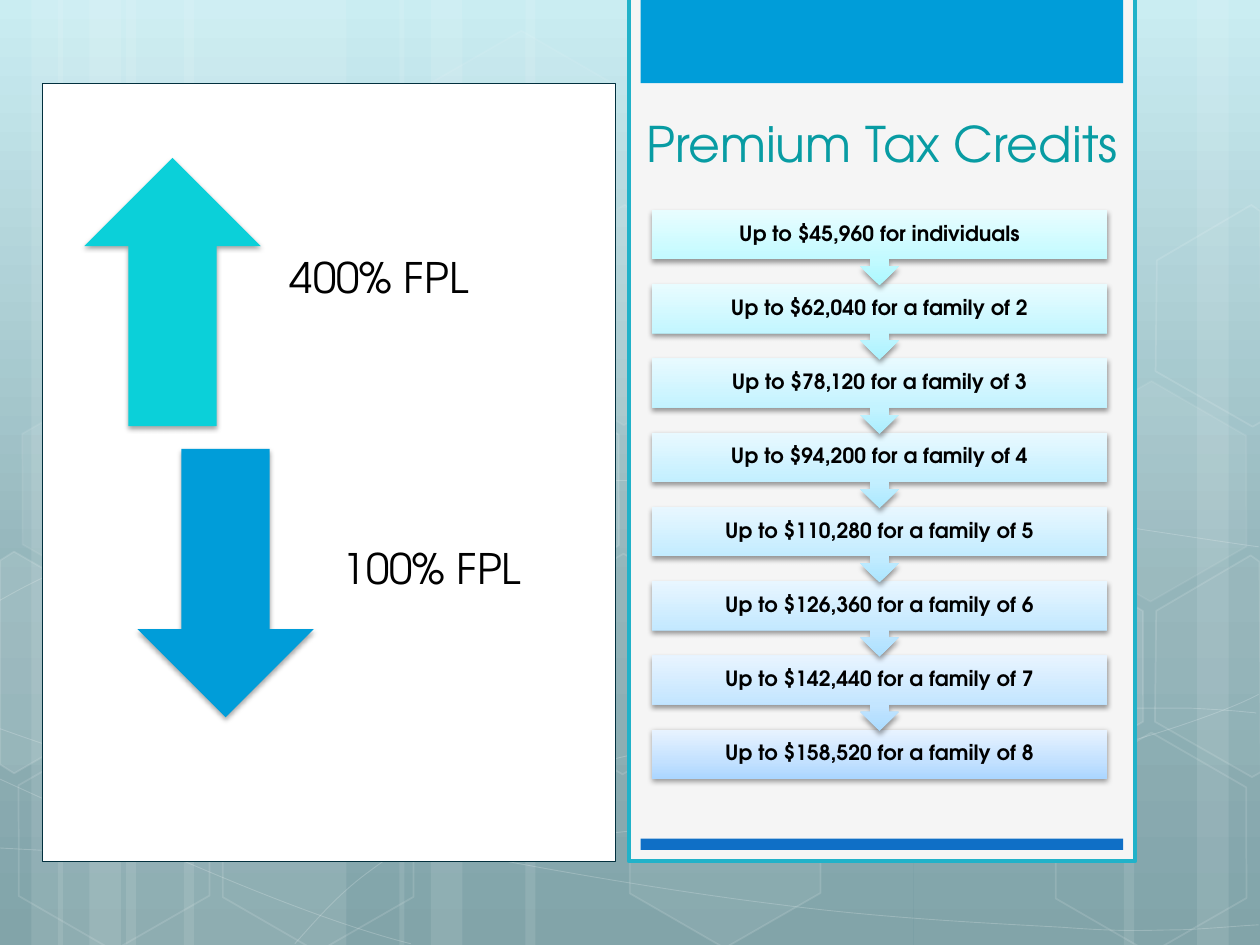
import math
from lxml import etree
from pptx import Presentation
from pptx import util as u
from pptx.dml.color import RGBColor
from pptx.enum import shapes, text
from pptx.oxml import ns

COLS, ROWS = 100, 75
FONT = "TeX Gyre Adventor"
WHITE = "FFFFFF"
KIND = shapes.MSO_SHAPE

prs = Presentation()
prs.slide_width, prs.slide_height = u.Inches(10), u.Inches(7.5)
COL, ROW = prs.slide_width / COLS, prs.slide_height / ROWS


def rgb(value):
    return RGBColor.from_string(value)


def node(parent, tag, **attrs):
    child = etree.SubElement(parent, ns.qn(tag))
    for name, value in attrs.items():
        child.set(name, str(value))
    return child


def place(x, y, w, h):
    return [round(v) for v in (x * COL, y * ROW, w * COL, h * ROW)]


def fade(sp, percent):
    for color in sp.element.xpath(".//p:spPr/a:solidFill/a:srgbClr"):
        node(color, "a:alpha", val=percent * 1000)


def outline(sp, color, width, percent=100):
    sp.line.color.rgb = rgb(color)
    sp.line.width = u.Pt(width)
    node(sp.element.xpath(".//a:ln//a:srgbClr")[0], "a:alpha", val=percent * 1000)


def paint(sp, fill=None, alpha=100):
    sp.shadow.inherit = False
    sp.line.fill.background()
    if fill:
        sp.fill.solid()
        sp.fill.fore_color.rgb = rgb(fill)
        fade(sp, alpha)
    else:
        sp.fill.background()


def draw(s, kind, box, fill=None, alpha=100):
    sp = s.shapes.add_shape(kind, *place(*box))
    paint(sp, fill, alpha)
    return sp


def gradient(owner, fill, stops, angle):
    fill.gradient()
    grad = owner.element.xpath(".//a:gradFill")[0]
    grad.set("rotWithShape", "0")
    stop_list = grad.find(ns.qn("a:gsLst"))
    for old in list(stop_list):
        stop_list.remove(old)
    for position, color in stops:
        stop = node(stop_list, "a:gs", pos=position * 1000)
        node(stop, "a:srgbClr", val=color)
    grad.find(ns.qn("a:lin")).set("ang", str(angle * 60000))


def drop_shadow(sp, alpha, distance):
    effects = sp.element.xpath(".//a:effectLst")[0]
    shadow = node(effects, "a:outerShdw", blurRad=u.Pt(3.1), dist=u.Pt(distance),
                  dir=5400000, rotWithShape=0)
    node(node(shadow, "a:srgbClr", val="000000"), "a:alpha", val=alpha * 1000)


def label(s, box, words, size, color="000000", bold=False, align="CENTER",
          anchor="MIDDLE", insets=(0.9, 0.9, 0.9, 0.9), spacing=0.9):
    tf = s.shapes.add_textbox(*place(*box)).text_frame
    sides = ("margin_left", "margin_top", "margin_right", "margin_bottom")
    frame = dict(zip(sides, (round(i * COL) for i in insets)), word_wrap=True,
                 vertical_anchor=getattr(text.MSO_ANCHOR, anchor))
    p = tf.paragraphs[0]
    r = p.add_run()
    r.text = words
    para = {"alignment": getattr(text.PP_ALIGN, align), "line_spacing": spacing,
            "space_after": u.Pt(size * 0.35)}
    font = {"name": FONT, "size": u.Pt(size), "bold": bold}
    for target, values in ((tf, frame), (p, para), (r.font, font)):
        for name, value in values.items():
            setattr(target, name, value)
    r.font.color.rgb = rgb(color)


def freeform(s, points, closed):
    pts = [(round(x * COL), round(y * ROW)) for x, y in points]
    builder = s.shapes.build_freeform(*pts[0], scale=1.0)
    builder.add_line_segments(pts[1:], close=closed)
    return builder.convert_to_shape()


def curve(s, points):
    sp = freeform(s, points, False)
    track = sp.element.xpath(".//a:pathLst/*")[0]
    lines = track.findall(ns.qn("a:lnTo"))
    for i in range(0, len(lines), 3):
        bend = node(track, "a:cubicBezTo")
        for line in lines[i:i + 3]:
            bend.append(line[0])
            track.remove(line)
    paint(sp)
    outline(sp, WHITE, 0.5, 20)


def cut_hexagon(s, center, points, alpha):
    cx, cy = center
    c, n = math.cos(math.radians(30)), math.sin(math.radians(30))
    upright = [(cx + (x - cx) * c + (y - cy) * n, cy - (x - cx) * n + (y - cy) * c)
               for x, y in points]
    sp = freeform(s, upright, True)
    sp.rotation = 30
    paint(sp, WHITE if alpha else None, alpha)
    outline(sp, WHITE, 1, 12)


def backdrop(s, box):
    x0, y0, w, h = box
    gradient(s, s.background.fill, [(0, "C4EBF1"), (62, "88ADB3"), (100, "749AA0")], 90)
    for x, width, turn in (
        (10, 17.5, 0), (0, 5, 0), (2.5, 8.3, 0), (14.6, 17.5, 0), (4.6, 5, 0), (7.1, 8.3, 0),
        (72.5, 17.5, 180), (95, 5, 180), (89.2, 8.3, 180),
        (41.7, 30.8, 0), (31.7, 5, 0), (34.2, 8.3, 0),
    ):
        draw(s, KIND.RECTANGLE, (x0 + x, y0, width, h), WHITE, 10).rotation = turn
    for points in (
        [(-.1, 67.3), (5.3, 67.6), (10.7, 67.9), (18.2, 67.8), (25.7, 67.7), (34.9, 67.5),
         (44.9, 66.5), (55, 65.5), (69.2, 63.6), (78.3, 61.7), (87.5, 59.8), (96.8, 56.8),
         (99.9, 55.1)],
        [(-.1, 47.7), (2.7, 46.1), (5.6, 44.6), (11.3, 43.1), (17, 41.6), (25, 39.4),
         (33.9, 38.7), (42.8, 38), (53.5, 37.9), (64.5, 38.7), (75.5, 39.5), (93.9, 42.6),
         (99.9, 43.4)],
        [(-.3, 61.7), (11.8, 67.2), (23.9, 72.7), (32.6, 74.9)],
        [(-.1, 57.8), (3, 58.9), (6.1, 60), (11.9, 61.6), (17.8, 63.1), (26.5, 65.6),
         (34.8, 67.3), (43.1, 69), (53.7, 70.8), (61.9, 71.8), (70.2, 72.9), (79.1, 73.3),
         (84.4, 73.6), (89.7, 74), (91.1, 73.8), (93.6, 73.8), (96.2, 73.7), (98, 73.5),
         (99.9, 73.4)],
        [(23.4, 74.9), (25.2, 72.9), (26.9, 70.9), (29.4, 69.1), (31.8, 67.3), (35.1, 65.3),
         (37.9, 63.9), (40.7, 62.5), (42.4, 61.9), (46.1, 60.9), (49.8, 59.9), (56.5, 58.5),
         (60, 57.8), (63.5, 57.1), (64, 57.1), (67.1, 56.9), (70.2, 56.6), (75.1, 56.3),
         (78.6, 56.2), (82, 56.1), (87.8, 56.2), (87.8, 56.2), (90, 56.2), (92.2, 56.2),
         (94.4, 56.2), (96.3, 56.3), (97.9, 56.4), (98.8, 56.5), (99.7, 56.6), (99.4, 56.5),
         (99.7, 56.6)],
    ):
        curve(s, [(x0 + x, y0 + y) for x, y in points])
    for x, y, alpha, edge in (
        (32.8, 31.3, 10, 12), (40.7, 45.1, 0, 12), (40.8, 17.4, 7, 8), (32.6, 3.6, 4, 8),
        (48.8, 58.9, 6, 12), (.3, 59.1, 0, 12), (.6, 31.2, 7, 8), (16.5, 59.2, 0, 12),
        (74.4, 45.3, 10, 12), (82.6, 59.3, 0, 12), (82.6, 31.4, 7, 8),
    ):
        sp = draw(s, KIND.HEXAGON, (x0 + x, y0 + y, 17.5, 15.2), WHITE if alpha else None, alpha)
        sp.adjustments[0] = 0.29
        sp.rotation = 30
        outline(sp, WHITE, 1, edge)
    left = [(0, 44.5), (1.1, 43.8), (8.7, 48.2), (8.7, 57), (1.1, 61.4), (0, 60.7)]
    right = [(91.8, 48.5), (99.3, 44.1), (100, 44.6), (100.1, 61.3), (99.4, 61.7), (91.7, 57.3)]
    cut_hexagon(s, (2.7, 53.5), left, 10)
    cut_hexagon(s, (97.6, 52), right, 4)
    cut_hexagon(s, (97.6, 24.1), [(x, y - 27.8) for x, y in right], 0)


def side_panel(s, box):
    x, y, w, h = box
    outline(draw(s, KIND.RECTANGLE, box, "F5F5F5"), "21B2C9", 2.25)
    draw(s, KIND.RECTANGLE, (x + 0.95, y, 38.3, 6.8), "009DD9")
    draw(s, KIND.RECTANGLE, (x + 0.95, y + h - 1.8, 38.3, 0.9), "0F6FC6")
    label(s, (x + 0.1, y + 7.7, 40, 6.7), "Premium Tax Credits", 28, "089CA3",
          anchor="BOTTOM", insets=(1, 0.5, 1, 0.5), spacing=1.0)


def income_steps(s, box):
    x, y, w, h = box
    amounts = ("45,960", "62,040", "78,120", "94,200", "110,280", "126,360", "142,440", "158,520")
    last = len(amounts) - 1
    bar = 3.9
    pitch = (h - bar) / last
    for i in reversed(range(len(amounts))):
        top = y + i * pitch
        kind, height = (KIND.RECTANGLE, bar) if i == last else (KIND.UP_ARROW_CALLOUT, 6)
        sp = draw(s, kind, (x, top, w, height))
        sp.rotation = 0 if i == last else 180
        tones = ((0, "AB", 248, 34), (35, "C3", 250, 25), (100, "E8", 253, 10))
        gradient(sp, sp.fill, [(pos, f"{red}{round(green - drop * i / last):02X}FF")
                               for pos, red, green, drop in tones], 270)
        drop_shadow(sp, 38, 1.6)
        who = f"a family of {i + 1}" if i else "individuals"
        label(s, (x, top, w, bar), f"Up to ${amounts[i]} for {who}", 12, bold=True)


def level_arrows(s, box):
    x, y, w, h = box
    outline(draw(s, KIND.RECTANGLE, box, WHITE), "02303E", 0.25)
    for dx, dy, kind, color, words in (
        (3.35, 5.9, KIND.UP_ARROW, "0BD0D9", "400% FPL"),
        (7.55, 29, KIND.DOWN_ARROW, "009DD9", "100% FPL"),
    ):
        drop_shadow(draw(s, kind, (x + dx, y + dy, 14, 21.3), color), 35, 1.8)
        label(s, (x + dx + 14.4, y + dy, 23.8, 21.3), words, 24, align="LEFT",
              insets=(1.9, 0, 1.9, 1.9))


def main():
    s = prs.slides.add_slide(prs.slide_layouts[6])
    backdrop(s, (0, 0, COLS, ROWS))
    side_panel(s, (49.9, -0.2, 40.2, 68.55))
    income_steps(s, (51.75, 16.65, 36.1, 45.15))
    level_arrows(s, (3.35, 6.63, 45.5, 61.73))
    prs.save("out.pptx")


if __name__ == "__main__":
    main()
